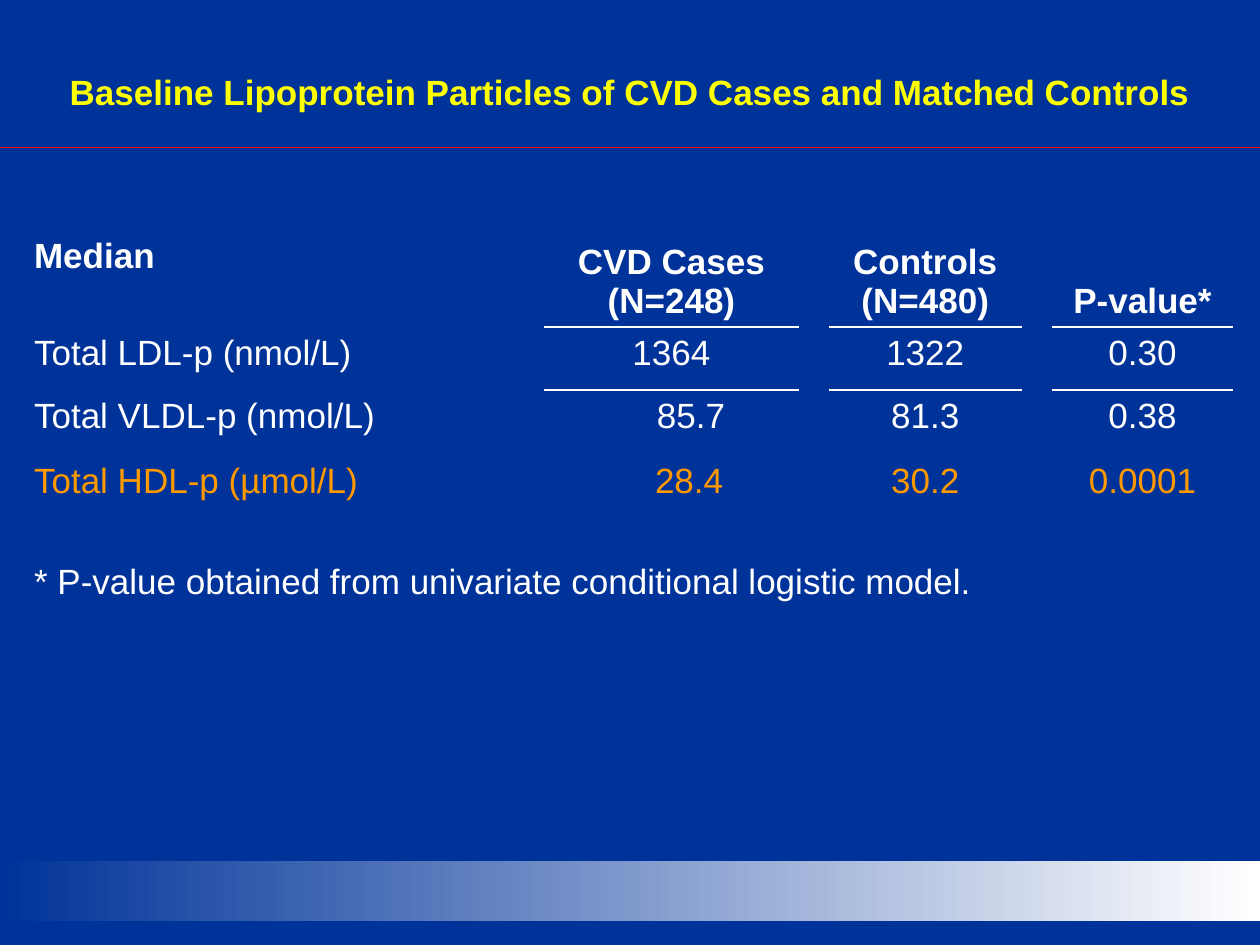
from dataclasses import dataclass
from typing import Optional

from lxml import etree
from pptx import Presentation
from pptx import util as u
from pptx.dml.color import RGBColor
from pptx.enum import shapes, text
from pptx.oxml import ns

NO_GRID_STYLE = "{2D5ABB26-0587-4C30-8999-92F81FD0307C}"


@dataclass(frozen=True)
class Theme:
    font: str = "Arial"
    size: int = 20
    background: str = "003399"
    title: str = "FFFF00"
    body: str = "FFFFFF"
    highlight: str = "FF9900"
    divider: str = "FF0000"


@dataclass(frozen=True)
class Entry:
    row: int
    col: int
    text: str
    last_col: Optional[int] = None
    indent: float = 0
    top: float = 0.05


THEME = Theme()
COLUMNS = [3.91, 0.23, 0.2, 1.82, 0.23, 1.53, 0.23, 1.44]
ROWS = [0.73, 0.5, 0.52, 0.41, 0.89]
RULED_COLUMNS = [2, 3, 5, 7]
HEADER_ROW, HIGHLIGHT_ROW, NOTE_ROW = 0, 3, 4
ENTRIES = [
    Entry(0, 0, "Median"),
    Entry(0, 2, "CVD Cases\v(N=248)", last_col=3),
    Entry(0, 5, "Controls\v(N=480)"),
    Entry(0, 7, "P-value*"),
    Entry(1, 0, "Total LDL-p (nmol/L)"),
    Entry(1, 2, "1364", last_col=3),
    Entry(1, 5, "1322"),
    Entry(1, 7, "0.30"),
    Entry(2, 0, "Total VLDL-p (nmol/L)"),
    Entry(2, 2, "85.7", last_col=3, indent=0.31),
    Entry(2, 5, "81.3"),
    Entry(2, 7, "0.38"),
    Entry(3, 0, "Total HDL-p (µmol/L)"),
    Entry(3, 1, "", last_col=2),
    Entry(3, 3, "28.4", indent=0.08),
    Entry(3, 5, "30.2"),
    Entry(3, 7, "0.0001"),
    Entry(4, 0, "* P-value obtained from univariate conditional logistic model.",
          last_col=7, top=0.42),
]


def rgb(color: str) -> RGBColor:
    return RGBColor.from_string(color)


def write(tf, content: str, color: str, bold: bool, centred: bool) -> None:
    tf.text = content
    p = tf.paragraphs[0]
    p.alignment = text.PP_ALIGN.CENTER if centred else text.PP_ALIGN.LEFT
    for r in p.runs:
        r.font.name = THEME.font
        r.font.size = u.Pt(THEME.size)
        r.font.bold = bold
        r.font.color.rgb = rgb(color)


def add_border(cell, side: str) -> None:
    ln = etree.Element(ns.qn(f"a:{side}"), w=str(u.Pt(1.5)))
    fill = etree.SubElement(ln, ns.qn("a:solidFill"))
    etree.SubElement(fill, ns.qn("a:srgbClr"), val=THEME.body)
    cell._tc.get_or_add_tcPr().insert(0, ln)


def add_band(s) -> None:
    sp = s.shapes.add_shape(shapes.MSO_SHAPE.RECTANGLE, u.Inches(0), u.Inches(6.83),
                            u.Inches(10), u.Inches(0.48))
    sp.shadow.inherit = False
    sp.line.fill.background()
    sp.fill.gradient()
    sp.fill.gradient_angle = 0
    stops = zip(sp.fill.gradient_stops, [(0, THEME.background), (1, THEME.body)])
    for stop, (position, color) in stops:
        stop.position = position
        stop.color.rgb = rgb(color)


def add_title(s, content: str) -> None:
    sp = s.shapes.add_textbox(u.Inches(0), u.Inches(0.1), u.Inches(10), u.Inches(1.25))
    tf = sp.text_frame
    tf.word_wrap = True
    tf.vertical_anchor = text.MSO_ANCHOR.MIDDLE
    write(tf, content, THEME.title, bold=True, centred=True)


def add_divider(s) -> None:
    line = s.shapes.add_connector(shapes.MSO_CONNECTOR.STRAIGHT, u.Inches(0),
                                  u.Inches(1.17), u.Inches(10), u.Inches(1.17))
    line.line.color.rgb = rgb(THEME.divider)
    line.line.width = u.Pt(0.75)
    etree.SubElement(line._element.spPr, ns.qn("a:effectLst"))


def fill_entry(table, entry: Entry) -> None:
    cell = table.cell(entry.row, entry.col)
    if entry.last_col is not None:
        cell.merge(table.cell(entry.row, entry.last_col))
    cell.margin_left = u.Inches(0.1 + entry.indent)
    cell.margin_top = u.Inches(entry.top)
    header = entry.row == HEADER_ROW
    if header and entry.col > 0:
        cell.vertical_anchor = text.MSO_ANCHOR.BOTTOM
    color = THEME.highlight if entry.row == HIGHLIGHT_ROW else THEME.body
    write(cell.text_frame, entry.text, color, bold=header, centred=entry.col > 0)


def add_particle_table(s) -> None:
    table = s.shapes.add_table(len(ROWS), len(COLUMNS), u.Inches(0.17), u.Inches(1.83),
                               u.Inches(sum(COLUMNS)), u.Inches(sum(ROWS))).table
    table.first_row = table.horz_banding = False
    table._tbl.tblPr.find(ns.qn("a:tableStyleId")).text = NO_GRID_STYLE
    for column, width in zip(table.columns, COLUMNS):
        column.width = u.Inches(width)
    for row, height in zip(table.rows, ROWS):
        row.height = u.Inches(height)
    for cell in table.iter_cells():
        cell.fill.background()
    for col in RULED_COLUMNS:
        add_border(table.cell(HEADER_ROW, col), "lnB")
        add_border(table.cell(HEADER_ROW + 1, col), "lnT")
    for entry in ENTRIES:
        fill_entry(table, entry)


def main() -> None:
    prs = Presentation()
    prs.slide_width, prs.slide_height = u.Inches(10), u.Inches(7.5)
    s = prs.slides.add_slide(prs.slide_layouts[6])
    s.background.fill.solid()
    s.background.fill.fore_color.rgb = rgb(THEME.background)
    add_band(s)
    add_title(s, "Baseline Lipoprotein Particles of CVD Cases and Matched Controls")
    add_particle_table(s)
    add_divider(s)
    prs.save("out.pptx")


if __name__ == "__main__":
    main()
